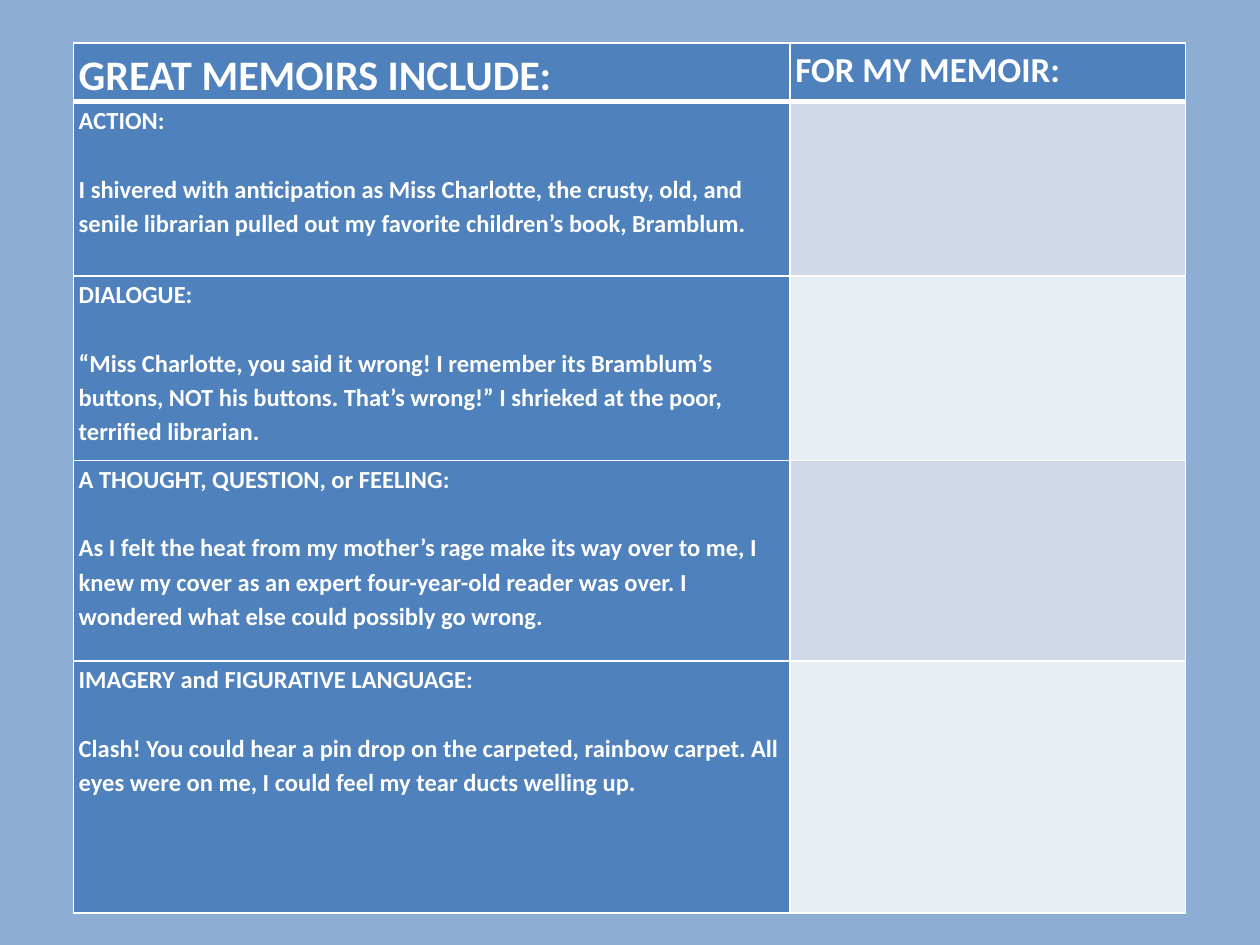
from lxml import etree
from pptx import Presentation
from pptx.dml.color import RGBColor
from pptx.oxml.ns import qn
from pptx.util import Pt

WHITE, BLUE, BACKDROP = "FFFFFF", "4F81BD", "8DADD4"
BANDS = ["D0D8E8", "E9EDF4"]
COL_WIDTHS = [409.5, 226]
ROW_HEIGHTS = [33.5, 99.5, 105.5, 114.5, 144]
HEADERS = [("GREAT MEMOIRS INCLUDE:", 24), ("FOR MY MEMOIR:", 20)]
EXAMPLES = [
    ("ACTION:",
     "I shivered with anticipation as Miss Charlotte, the crusty, old, and senile "
     "librarian pulled out my favorite children’s book, Bramblum."),
    ("DIALOGUE:",
     "“Miss Charlotte, you said it wrong! I remember its Bramblum’s buttons, NOT his "
     "buttons. That’s wrong!” I shrieked at the poor, terrified librarian."),
    ("A THOUGHT, QUESTION, or FEELING:",
     "As I felt the heat from my mother’s rage make its way over to me, I knew my cover "
     "as an expert four-year-old reader was over. I wondered what else could possibly "
     "go wrong."),
    ("IMAGERY and FIGURATIVE LANGUAGE:",
     "Clash! You could hear a pin drop on the carpeted, rainbow carpet. All eyes were on "
     "me, I could feel my tear ducts welling up."),
]


def format_cell(cell, fill, top, bottom):
    """Set margins, borders (widths in points) and fill of a cell."""
    cell.margin_left = cell.margin_right = Pt(3)
    cell.margin_top = cell.margin_bottom = Pt(0)
    tcPr = cell._tc.get_or_add_tcPr()
    for side, width in (("L", 1), ("R", 1), ("T", top), ("B", bottom)):
        ln = etree.SubElement(tcPr, qn(f"a:ln{side}"), w=str(Pt(width)))
        solid = etree.SubElement(ln, qn("a:solidFill"))
        etree.SubElement(solid, qn("a:srgbClr"), val=WHITE)
    cell.fill.solid()
    cell.fill.fore_color.rgb = RGBColor.from_string(fill)


def write_cell(cell, lines, size):
    cell.text_frame.text = "\n".join(lines)
    for i, p in enumerate(cell.text_frame.paragraphs):
        p.line_spacing = 1.15
        p.space_before = Pt(19.6 if i else 0)
        font = p.runs[0].font
        font.name, font.size, font.bold = "Calibri", Pt(size), True
        font.color.rgb = RGBColor.from_string(WHITE)


prs = Presentation()
prs.slide_width, prs.slide_height = Pt(720), Pt(540)
s = prs.slides.add_slide(prs.slide_layouts[6])
s.background.fill.solid()
s.background.fill.fore_color.rgb = RGBColor.from_string(BACKDROP)

table = s.shapes.add_table(len(ROW_HEIGHTS), len(COL_WIDTHS), Pt(42), Pt(24.5),
                           Pt(sum(COL_WIDTHS)), Pt(sum(ROW_HEIGHTS))).table
for col, width in zip(table.columns, COL_WIDTHS):
    col.width = Pt(width)
for row, height in zip(table.rows, ROW_HEIGHTS):
    row.height = Pt(height)

for c, (header, size) in enumerate(HEADERS):
    cell = table.cell(0, c)
    format_cell(cell, BLUE, 1, 3)
    write_cell(cell, [header], size)

for r, lines in enumerate(EXAMPLES, start=1):
    top = 3 if r == 1 else 1
    format_cell(table.cell(r, 0), BLUE, top, 1)
    write_cell(table.cell(r, 0), lines, 14)
    format_cell(table.cell(r, 1), BANDS[(r - 1) % 2], top, 1)

prs.save("out.pptx")
